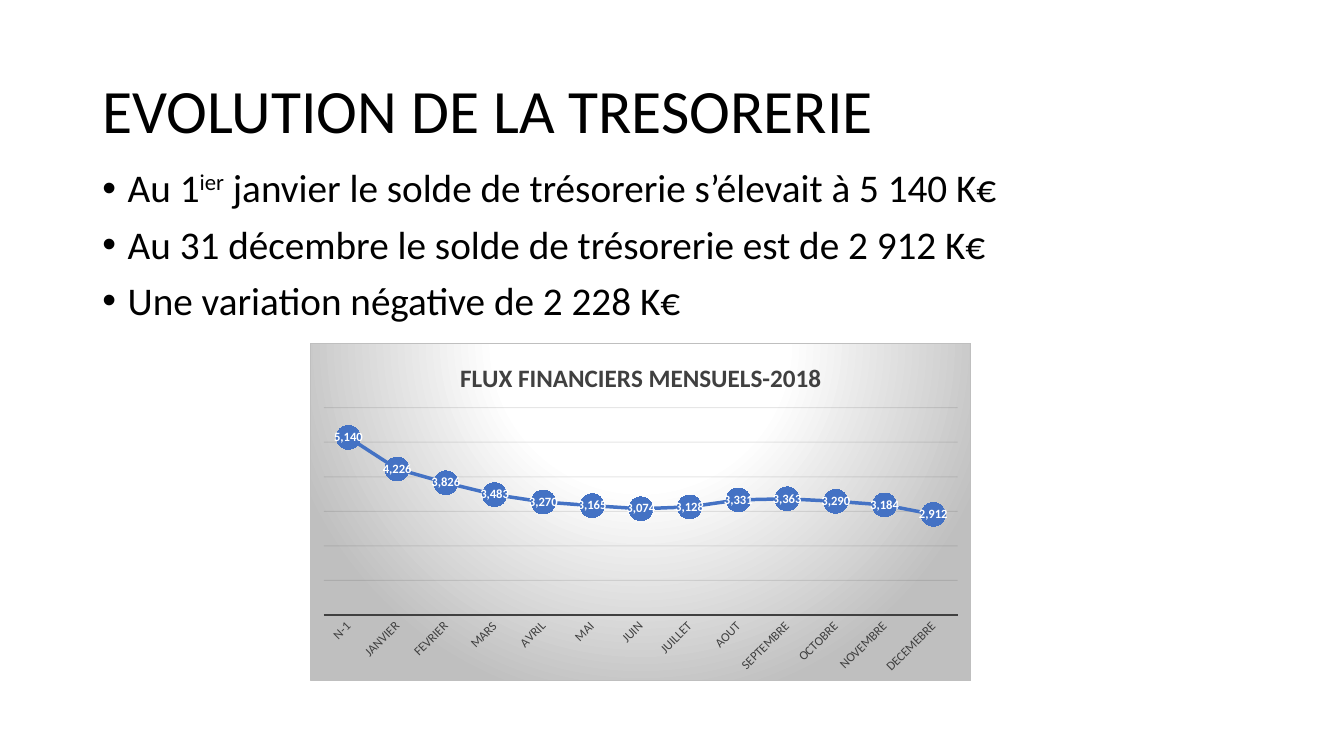
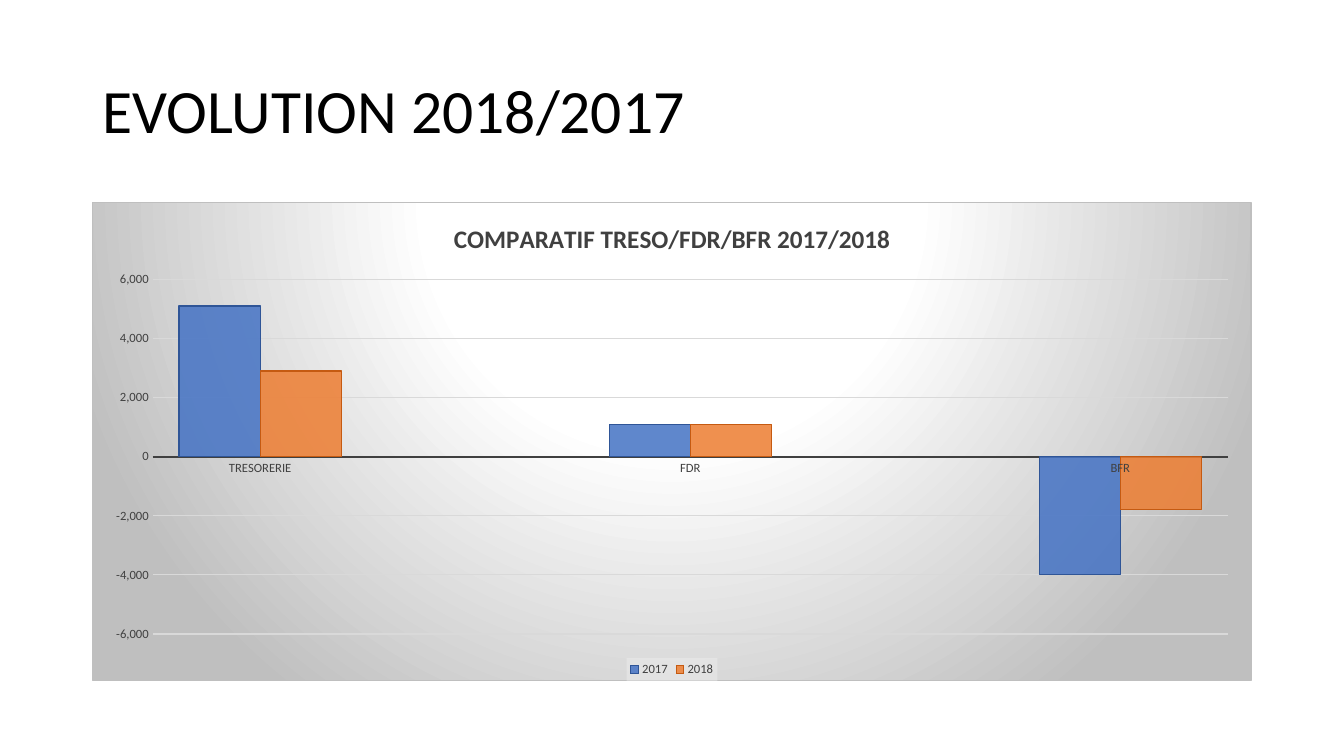
from lxml import etree
from pptx import Presentation
from pptx.chart.data import CategoryChartData
from pptx.dml.color import RGBColor
from pptx.enum.chart import (XL_CHART_TYPE, XL_LABEL_POSITION, XL_LEGEND_POSITION,
                             XL_MARKER_STYLE, XL_TICK_MARK)
from pptx.enum.text import MSO_ANCHOR
from pptx.oxml import parse_xml
from pptx.oxml.ns import nsdecls, qn
from pptx.util import Cm, Pt

LINE_CHART = XL_CHART_TYPE.LINE_MARKERS
COLUMN_CHART = XL_CHART_TYPE.COLUMN_CLUSTERED
LABEL_CENTER = XL_LABEL_POSITION.CENTER
LEGEND_BOTTOM = XL_LEGEND_POSITION.BOTTOM
CIRCLE = XL_MARKER_STYLE.CIRCLE
NO_TICK = XL_TICK_MARK.NONE
MIDDLE = MSO_ANCHOR.MIDDLE

FONT = "Calibri"
BLACK, WHITE, DARK = "000000", "FFFFFF", "404040"
BLUE, ORANGE = "4472C4", "ED7D31"
SILVER, LIGHT, INK, PALE = "BFBFBF", "D9D9D9", "0D0D0D", "F2F2F2"
NUMBER_FORMAT = "#,##0"

LEFT, WIDTH = 2.33, 29.21
TITLE_BOX = (LEFT, 1.01, WIDTH, 3.68)
BODY_BOX = (LEFT, 4.13, WIDTH, 13.03)
MONTHLY_BOX = (7.82, 8.64, 16.66, 8.53)
COMPARISON_BOX = (LEFT, 5.08, WIDTH, 12.09)

MONTHLY_BALANCES = {
    "N-1": 5140, "JANVIER": 4226, "FEVRIER": 3826, "MARS": 3483, "AVRIL": 3270,
    "MAI": 3165, "JUIN": 3074, "JUILLET": 3128, "AOUT": 3331, "SEPTEMBRE": 3363,
    "OCTOBRE": 3290, "NOVEMBRE": 3184, "DECEMEBRE": 2912,
}
COMPARED_ITEMS = ["TRESORERIE", "", "FDR", "", "BFR"]
COMPARED_YEARS = {
    "2017": (5100, None, 1100, None, -4000),
    "2018": (2900, None, 1100, None, -1800),
}
YEAR_COLORS = [(BLUE, "2F5597"), (ORANGE, "C55A11")]

CHART_BACKGROUND = f"""<c:spPr {nsdecls("c", "a")}>
  <a:gradFill>
    <a:gsLst>
      <a:gs pos="0"><a:srgbClr val="{WHITE}"/></a:gs>
      <a:gs pos="39000"><a:srgbClr val="{WHITE}"/></a:gs>
      <a:gs pos="100000"><a:srgbClr val="{SILVER}"/></a:gs>
    </a:gsLst>
    <a:path path="circle"><a:fillToRect l="50000" t="-80000" r="50000" b="180000"/></a:path>
  </a:gradFill>
  <a:ln w="9525"><a:solidFill><a:srgbClr val="{SILVER}"/></a:solidFill></a:ln>
</c:spPr>"""
LEGEND_BACKGROUND = f"""<c:spPr {nsdecls("c", "a")}>
  <a:solidFill><a:srgbClr val="{PALE}"><a:alpha val="39000"/></a:srgbClr></a:solidFill>
</c:spPr>"""


def color(hex_value):
    return RGBColor.from_string(hex_value)


def set_values(target, **values):
    for name, value in values.items():
        setattr(target, name, value)


def style_font(font, size, hex_value, bold=False):
    set_values(font, name=FONT, size=Pt(size), bold=bold)
    font.color.rgb = color(hex_value)


def style_fill(fill, hex_value):
    fill.solid()
    fill.fore_color.rgb = color(hex_value)


def style_line(line, hex_value, width):
    style_fill(line.fill, hex_value)
    line.width = Pt(width)


def set_opacity(element, color_path, percent):
    for node in element.xpath(color_path):
        etree.SubElement(node, qn("a:alpha"), val=str(percent * 1000))


def set_background(element, background):
    """Put shape properties just before the element's text properties."""
    element.find(qn("c:txPr")).addprevious(parse_xml(background))


def add_text_frame(slide, box):
    frame = slide.shapes.add_textbox(*map(Cm, box)).text_frame
    frame.word_wrap = True
    return frame


def add_title(slide, text):
    frame = add_text_frame(slide, TITLE_BOX)
    frame.vertical_anchor = MIDDLE
    paragraph = frame.paragraphs[0]
    set_values(paragraph, text=text, line_spacing=0.9)
    style_font(paragraph.runs[0].font, 44, BLACK)


def add_bullets(slide, items):
    """Each item is a list of (text, is_superscript) runs."""
    frame = add_text_frame(slide, BODY_BOX)
    for index, item in enumerate(items):
        paragraph = frame.add_paragraph() if index else frame.paragraphs[0]
        properties = paragraph._p.get_or_add_pPr()
        properties.set("marL", str(Cm(0.64)))
        properties.set("indent", str(-Cm(0.64)))
        etree.SubElement(properties, qn("a:buFont"), typeface="Arial")
        etree.SubElement(properties, qn("a:buChar"), char="•")
        set_values(paragraph, line_spacing=0.9, space_before=Pt(10 if index else 0))
        for text, is_superscript in item:
            run = paragraph.add_run()
            run.text = text
            style_font(run.font, 28, BLACK)
            if is_superscript:
                run._r.get_or_add_rPr().set("baseline", "30000")


def add_chart(slide, kind, box, title, categories, series):
    """Add a chart with the title, background and axes that all charts share."""
    data = CategoryChartData(number_format=NUMBER_FORMAT)
    data.categories = categories
    for name, values in series.items():
        data.add_series(name, values)
    chart = slide.shapes.add_chart(kind, *map(Cm, box), data).chart
    style_font(chart.font, 10, BLACK)
    set_background(chart._chartSpace, CHART_BACKGROUND)

    chart.has_title = True
    heading = chart.chart_title.text_frame.paragraphs[0].add_run()
    heading.text = title
    style_font(heading.font, 18, DARK, bold=True)
    chart.chart_title.include_in_layout = False

    for axis in (chart.category_axis, chart.value_axis):
        set_values(axis, major_tick_mark=NO_TICK, minor_tick_mark=NO_TICK)
        style_font(axis.tick_labels.font, 9, DARK)
    style_line(chart.category_axis.format.line, DARK, 1.5)
    chart.value_axis.has_major_gridlines = True
    chart.plots[0].vary_by_categories = False
    return chart


def add_monthly_chart(slide):
    chart = add_chart(slide, LINE_CHART, MONTHLY_BOX, "FLUX FINANCIERS MENSUELS-2018",
                      list(MONTHLY_BALANCES), {"Solde": list(MONTHLY_BALANCES.values())})
    chart.has_legend = False
    value_axis = chart.value_axis
    set_values(value_axis, visible=False, minimum_scale=0, maximum_scale=6000,
               major_unit=1000)
    style_line(value_axis.major_gridlines.format.line, INK, 0.75)
    set_opacity(value_axis._element, "c:majorGridlines//a:srgbClr", 10)
    chart.category_axis._element.xpath("c:txPr/a:bodyPr")[0].set("rot", "-2700000")

    balance = chart.plots[0].series[0]
    balance.smooth = False
    style_line(balance.format.line, BLUE, 2.5)
    set_values(balance.marker, style=CIRCLE, size=17)
    style_fill(balance.marker.format.fill, BLUE)
    balance.marker.format.line.fill.background()
    labels = balance.data_labels
    set_values(labels, show_value=True, position=LABEL_CENTER,
               number_format=NUMBER_FORMAT, number_format_is_linked=False)
    style_font(labels.font, 9, WHITE, bold=True)


def add_comparison_chart(slide):
    chart = add_chart(slide, COLUMN_CHART, COMPARISON_BOX,
                      "COMPARATIF TRESO/FDR/BFR 2017/2018", COMPARED_ITEMS, COMPARED_YEARS)
    value_axis = chart.value_axis
    set_values(value_axis, minimum_scale=-6000, maximum_scale=6000, major_unit=2000)
    set_values(value_axis.tick_labels, number_format=NUMBER_FORMAT,
               number_format_is_linked=False)
    value_axis.format.line.fill.background()
    style_line(value_axis.major_gridlines.format.line, LIGHT, 0.75)

    chart.has_legend = True
    set_values(chart.legend, position=LEGEND_BOTTOM, include_in_layout=False)
    style_font(chart.legend.font, 9, DARK)
    set_background(chart.legend._element, LEGEND_BACKGROUND)

    set_values(chart.plots[0], gap_width=65, overlap=0)
    for year, (fill_color, edge_color) in zip(chart.plots[0].series, YEAR_COLORS):
        year.invert_if_negative = False
        style_fill(year.format.fill, fill_color)
        set_opacity(year._element, "c:spPr/a:solidFill/a:srgbClr", 85)
        style_line(year.format.line, edge_color, 0.75)


def main():
    deck = Presentation()
    set_values(deck, slide_width=Cm(33.87), slide_height=Cm(19.05))
    blank = deck.slide_layouts[6]

    treasury = deck.slides.add_slide(blank)
    add_title(treasury, "EVOLUTION DE LA TRESORERIE")
    add_bullets(treasury, [
        [("Au 1", False), ("ier", True),
         (" janvier le solde de trésorerie s’élevait à 5 140 K€", False)],
        [("Au 31 décembre le solde de trésorerie est de 2 912 K€", False)],
        [("Une variation négative de 2 228 K€", False)],
    ])
    add_monthly_chart(treasury)

    comparison = deck.slides.add_slide(blank)
    add_title(comparison, "EVOLUTION 2018/2017")
    add_comparison_chart(comparison)

    deck.save("out.pptx")


if __name__ == "__main__":
    main()
